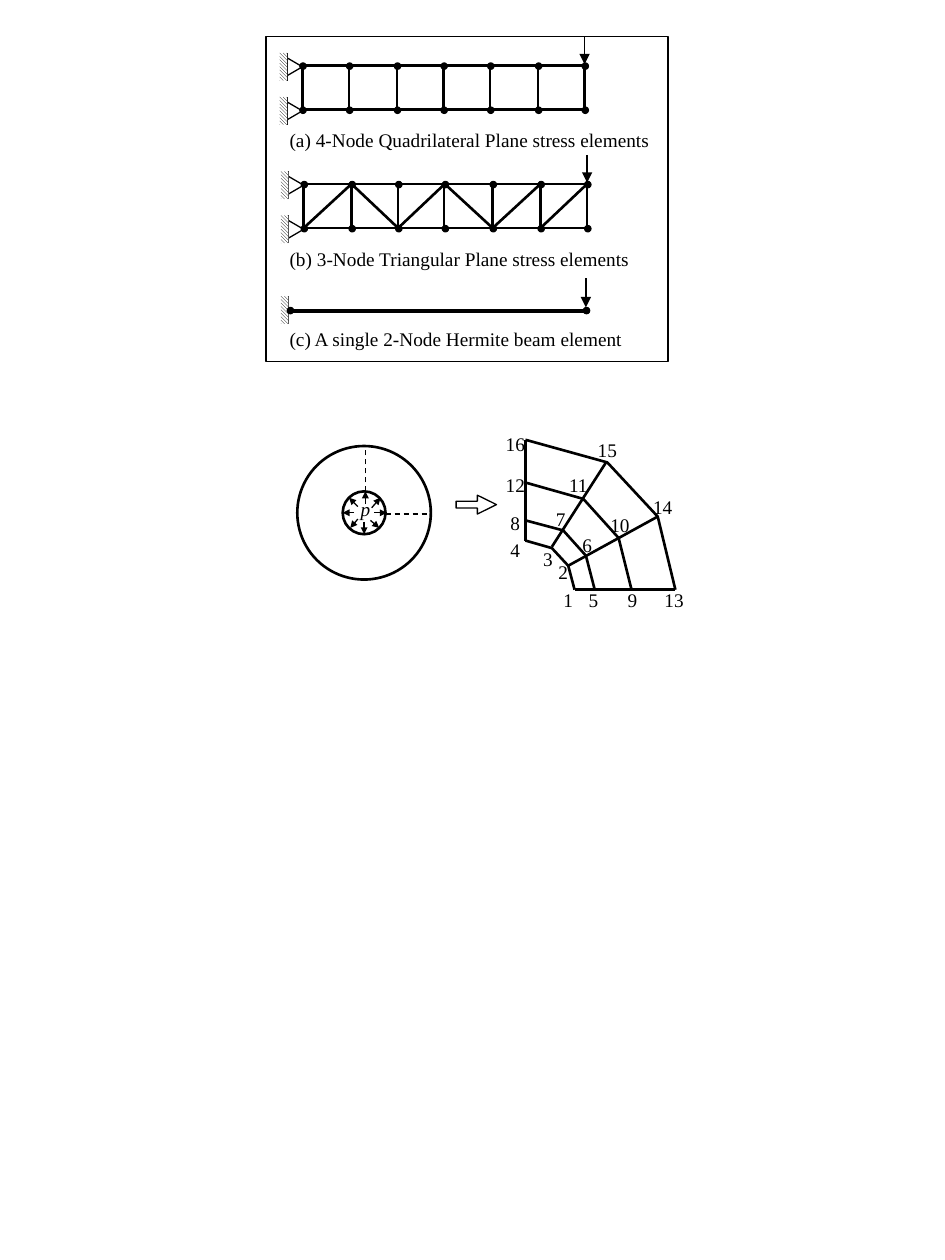
from dataclasses import dataclass
from typing import Any, NamedTuple, Optional

import lxml.etree
import pptx
import pptx.dml.color
import pptx.enum.dml
import pptx.enum.shapes
import pptx.enum.text
import pptx.oxml.ns
import pptx.util

PX = 9144  # EMU in one px, 100 px to the inch
SHAPE = pptx.enum.shapes.MSO_SHAPE
ALIGN = pptx.enum.text.PP_ALIGN
qn = pptx.oxml.ns.qn


@dataclass(frozen=True)
class Theme:
    ink: Any = pptx.dml.color.RGBColor(0, 0, 0)
    paper: Any = pptx.dml.color.RGBColor(255, 255, 255)
    font: str = "Times New Roman"
    size: int = 11
    thin: float = 0.75
    medium: float = 1
    thick: float = 1.5
    beam: float = 2.25


T = Theme()


class Point(NamedTuple):
    x: int
    y: int


class Box(NamedTuple):
    x: int
    y: int
    w: int
    h: int


@dataclass(frozen=True)
class Strip:
    """A cantilever mesh of six cells, with an optional diagonal in each."""
    x: int
    y: int
    length: int
    diagonals: str = ""
    thin_cell: Optional[int] = None
    height: int = 35
    cells: int = 6


@dataclass(frozen=True)
class Label:
    text: str
    box: Box
    inset: int = 0
    wrap: bool = True
    align: Any = ALIGN.CENTER
    italic: Optional[bool] = None


# Drawing functions
def add_box(s: Any, kind: Any, box: Box, fill: Any = None, width: float = 0) -> Any:
    sp = s.add_shape(kind, *(v * PX for v in box))
    sp.shadow.inherit = False
    style(sp, fill, width)
    return sp


def style(sp: Any, fill: Any, width: float) -> None:
    if fill is None:
        sp.fill.background()
    else:
        sp.fill.solid()
        sp.fill.fore_color.rgb = fill
    if width:
        sp.line.color.rgb = T.ink
        sp.line.width = pptx.util.Pt(width)
    else:
        sp.line.fill.background()


def add_line(s: Any, a: Point, b: Point, width: float = T.thin,
             head: Optional[str] = None, dashed: bool = False) -> None:
    c = s.add_connector(pptx.enum.shapes.MSO_CONNECTOR.STRAIGHT,
                        *(v * PX for v in (*a, *b)))
    c.line.color.rgb = T.ink
    c.line.width = pptx.util.Pt(width)
    if dashed:
        c.line.dash_style = pptx.enum.dml.MSO_LINE.DASH
    sppr = c._element.spPr
    if head:
        lxml.etree.SubElement(sppr.find(qn("a:ln")), qn("a:tailEnd"),
                              type="triangle", w=head, len=head)
    lxml.etree.SubElement(sppr, qn("a:effectLst"))


def add_polyline(s: Any, points: list[Point]) -> None:
    fb = s.build_freeform(*points[0], scale=PX)
    fb.add_line_segments(points[1:], close=False)
    sp = fb.convert_to_shape()
    sp.shadow.inherit = False
    style(sp, None, T.thick)


def add_label(s: Any, label: Label) -> None:
    tf = s.add_textbox(*(v * PX for v in label.box)).text_frame
    frame = dict(margin_left=label.inset * PX, margin_right=label.inset * PX,
                 margin_top=0, margin_bottom=0, word_wrap=label.wrap)
    for name, value in frame.items():
        setattr(tf, name, value)
    p = tf.paragraphs[0]
    p.alignment = label.align
    r = p.add_run()
    r.text = label.text
    for name, value in dict(name=T.font, size=pptx.util.Pt(T.size), italic=label.italic).items():
        setattr(r.font, name, value)
    r.font.color.rgb = T.ink


def add_node(s: Any, x: int, y: int) -> None:
    add_box(s, SHAPE.OVAL, Box(x - 2, y - 2, 5, 5), T.ink, T.thin)


def add_wall(s: Any, x: int, y: int) -> None:
    add_line(s, Point(x, y - 11), Point(x, y + 11))
    fill = add_box(s, SHAPE.RECTANGLE, Box(x - 6, y - 11, 6, 22)).fill
    fill.patterned()
    fill.pattern = pptx.enum.dml.MSO_PATTERN.LIGHT_DOWNWARD_DIAGONAL
    fill.fore_color.rgb, fill.back_color.rgb = T.ink, T.paper


def add_support(s: Any, x: int, y: int) -> None:
    pin, top, bottom = Point(x, y), Point(x - 12, y - 7), Point(x - 12, y + 7)
    for a, b in ((top, pin), (pin, bottom), (top, bottom)):
        add_line(s, a, b)
    add_wall(s, x - 12, y)


def add_strip(s: Any, strip: Strip) -> None:
    xs = [strip.x + round(strip.length * i / strip.cells) for i in range(strip.cells + 1)]
    top, bottom = strip.y, strip.y + strip.height
    for i, (x, right) in enumerate(zip(xs, xs[1:])):
        width = T.thin if i == strip.thin_cell else T.thick
        add_box(s, SHAPE.RECTANGLE, Box(x, top, right - x, strip.height), T.paper, width)
    for y in (top, bottom):
        add_support(s, strip.x, y + 1)
    add_line(s, Point(xs[-1], top - 23), Point(xs[-1], top - 1), T.medium, head="med")
    for x in xs:
        for y in (top, bottom):
            add_node(s, x, y)
    for x, right, mark in zip(xs, xs[1:], strip.diagonals):
        left_y, right_y = (bottom, top) if mark == "/" else (top, bottom)
        add_line(s, Point(x, left_y), Point(right, right_y), T.thick)


# Content: each caption box is wide enough for its text on one line
CAPTIONS = [
    Label(text, Box(220, y, w, 26), inset=10, wrap=False, align=ALIGN.LEFT)
    for text, y, w in (
        ("(a) 4-Node Quadrilateral Plane stress elements", 102, 308),
        ("(b) 3-Node Triangular Plane stress elements", 196, 292),
        ("(c) A single 2-Node Hermite beam element", 260, 286))]
STRIPS = [Strip(240, 52, 224), Strip(241, 146, 225, "/\\/\\//", thin_cell=3)]
PRESSURE = [(290, 400, 290, 390), (289, 414, 289, 424), (281, 407, 272, 407),
            (297, 407, 307, 407), (295, 403, 302, 395), (284, 402, 277, 395),
            (284, 412, 278, 419), (294, 413, 301, 419)]
RADII = [(290, 390, 290, 354), (306, 408, 342, 408)]
SPOKES = [(417, 429, 417, 349), (456, 468, 536, 468),
          (451, 449, 522, 410), (438, 434, 481, 367)]
RINGS = [[(456, 468), (451, 449), (438, 435), (417, 429)],
         [(472, 468), (465, 441), (447, 421), (417, 413)],
         [(501, 467), (491, 427), (463, 396), (417, 383)],
         [(536, 468), (522, 410), (482, 367), (417, 349)]]
# Top left corners of the node numbers, 1 to 16
NUMBERS = [(441, 467), (437, 445), (425, 434), (399, 427),
           (461, 467), (456, 423), (435, 403), (399, 406),
           (492, 467), (482, 407), (449, 376), (399, 376),
           (525, 467), (516, 393), (472, 348), (399, 343)]


def main() -> None:
    prs = pptx.Presentation()
    prs.slide_width, prs.slide_height = 750 * PX, 1000 * PX
    s = prs.slides.add_slide(prs.slide_layouts[6]).shapes

    # Cantilever models
    for strip in STRIPS:
        add_strip(s.add_group_shape().shapes, strip)
    beam = s.add_group_shape().shapes
    add_line(beam, Point(230, 247), Point(465, 247), T.beam)
    add_wall(beam, 229, 246)
    add_line(beam, Point(465, 221), Point(465, 244), T.medium, head="med")
    for x in (465, 230):
        add_node(beam, x, 246)
    for caption in CAPTIONS:
        add_label(s, caption)
    add_box(s, SHAPE.RECTANGLE, Box(211, 29, 319, 258), width=T.medium)

    # Cylinder under internal pressure
    g = s.add_group_shape().shapes
    for box in (Box(236, 354, 106, 106), Box(272, 390, 34, 34)):
        add_box(g, SHAPE.OVAL, box, T.paper, T.thick)
    for x1, y1, x2, y2 in PRESSURE:
        add_line(g, Point(x1, y1), Point(x2, y2), head="sm")
    add_label(g, Label("p", Box(280, 395, 20, 19), italic=True))
    for x1, y1, x2, y2 in RADII:
        add_line(g, Point(x1, y1), Point(x2, y2), dashed=True)

    # Quarter mesh
    for x1, y1, x2, y2 in SPOKES:
        add_line(g, Point(x1, y1), Point(x2, y2), T.thick)
    for ring in RINGS:
        add_polyline(g, [Point(*xy) for xy in ring])
    for n, (x, y) in enumerate(NUMBERS, 1):
        add_label(g, Label(str(n), Box(x, y, 20, 14)))
    arrow = add_box(g, SHAPE.RIGHT_ARROW, Box(362, 393, 32, 15), T.paper, T.thin)
    arrow.adjustments[0], arrow.adjustments[1] = 0.36, 1.01

    prs.save("out.pptx")


if __name__ == "__main__":
    main()
